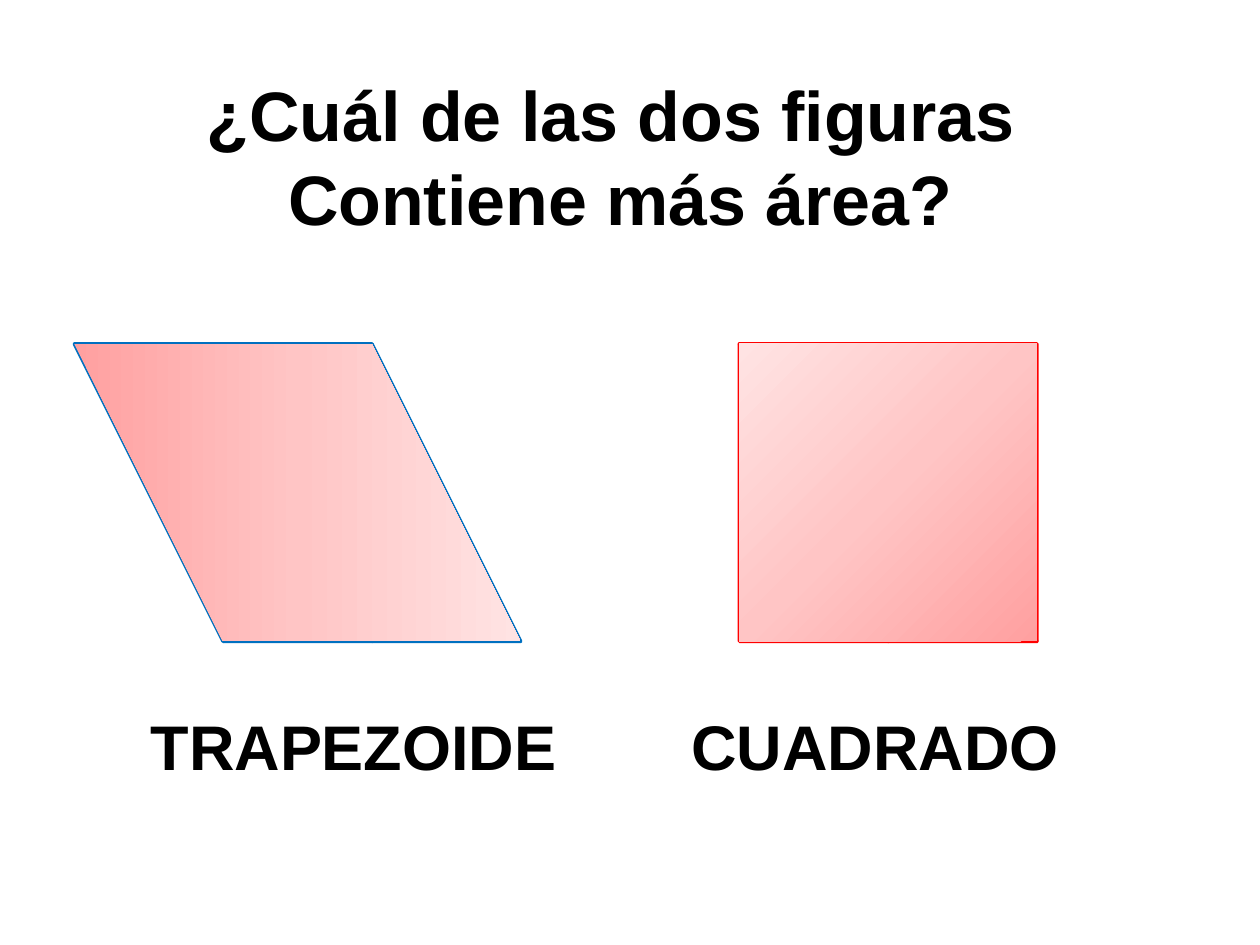
from lxml import etree
from pptx import Presentation
from pptx.dml.color import RGBColor
from pptx.enum.shapes import MSO_SHAPE
from pptx.enum.text import MSO_ANCHOR, MSO_AUTO_SIZE, PP_ALIGN
from pptx.oxml.ns import qn
from pptx.util import Pt

FONT = "Arial"
BLACK = "000000"
GRADIENT = ((0, "FFA0A0"), (50, "FFC5C5"), (100, "FFE3E3"))
HALF = 85  # width of one triangle, half the side of the square
SIDE = 2 * HALF
FIGURE_TOP = 196.5
LABEL_TOP = 400.5


def color(value):
    return RGBColor.from_string(value)


def format_text(paragraph, size):
    for run in paragraph.runs:
        run.font.name = FONT
        run.font.size = Pt(size)
        run.font.bold = True
        run.font.color.rgb = color(BLACK)


def fill_gradient(shape, angle):
    """Fill with the three gradient stops; the angle runs counter-clockwise."""
    shape.fill.gradient()
    shape.fill.gradient_angle = angle
    stops = shape._element.spPr.find(qn("a:gradFill")).find(qn("a:gsLst"))
    for stop in list(stops):
        stops.remove(stop)
    for position, value in GRADIENT:
        stop = etree.SubElement(stops, qn("a:gs"), pos=str(position * 1000))
        etree.SubElement(stop, qn("a:srgbClr"), val=value)


def add_title(slide, left, top, width, height):
    title = slide.shapes.title
    title.left, title.top = Pt(left), Pt(top)
    title.width, title.height = Pt(width), Pt(height)
    frame = title.text_frame
    frame.text = "¿Cuál de las dos figuras\nContiene más área?"
    frame.word_wrap = True
    frame.auto_size = MSO_AUTO_SIZE.NONE
    frame.vertical_anchor = MSO_ANCHOR.TOP
    for paragraph in frame.paragraphs:
        paragraph.alignment = PP_ALIGN.CENTER
        format_text(paragraph, 40)
    # The second line sits slightly to the right of the first
    frame.paragraphs[1]._p.get_or_add_pPr().set("marL", str(Pt(11)))


def add_triangles(slide, left, top, line_color, columns):
    """Outline right triangles, alternately turned, in the given columns."""
    for index, column in enumerate(columns):
        triangle = slide.shapes.add_shape(
            MSO_SHAPE.RIGHT_TRIANGLE,
            Pt(left + column * HALF), Pt(top), Pt(HALF), Pt(SIDE))
        triangle.rotation = 180 if index % 2 == 0 else 0
        triangle.shadow.inherit = False
        triangle.fill.background()
        triangle.line.color.rgb = color(line_color)
        triangle.line.width = Pt(2)


def add_figure(slide, kind, left, top, width, angle):
    figure = slide.shapes.add_shape(kind, Pt(left), Pt(top), Pt(width), Pt(SIDE))
    figure.shadow.inherit = False
    figure.line.fill.background()
    fill_gradient(figure, angle)
    return figure


def add_label(slide, text, left, top, width):
    label = slide.shapes.add_textbox(Pt(left), Pt(top), Pt(width), Pt(51))
    frame = label.text_frame
    frame.word_wrap = True
    frame.text = text
    format_text(frame.paragraphs[0], 36)


def main():
    presentation = Presentation()
    presentation.slide_width, presentation.slide_height = Pt(720), Pt(540)
    slide = presentation.slides.add_slide(presentation.slide_layouts[5])

    add_title(slide, 0, 37.5, 698, 104.5)

    trapezoid_left, square_left = 42.5, 422.5
    add_triangles(slide, trapezoid_left, FIGURE_TOP, "0070C0", (1, 1, 0, 2))
    add_triangles(slide, square_left, FIGURE_TOP, "FF0000", (1, 1, 0, 0))

    trapezoid = add_figure(slide, MSO_SHAPE.PARALLELOGRAM, trapezoid_left,
                           FIGURE_TOP, 3 * HALF, 180)
    trapezoid.adjustments[0] = 0.5
    trapezoid._element.spPr.find(qn("a:xfrm")).set("flipH", "1")
    add_figure(slide, MSO_SHAPE.RECTANGLE, square_left, FIGURE_TOP, SIDE, 135)

    add_label(slide, "TRAPEZOIDE", 79, LABEL_TOP, 252)
    add_label(slide, "CUADRADO", 388, LABEL_TOP, 227)

    presentation.save("out.pptx")


if __name__ == "__main__":
    main()
